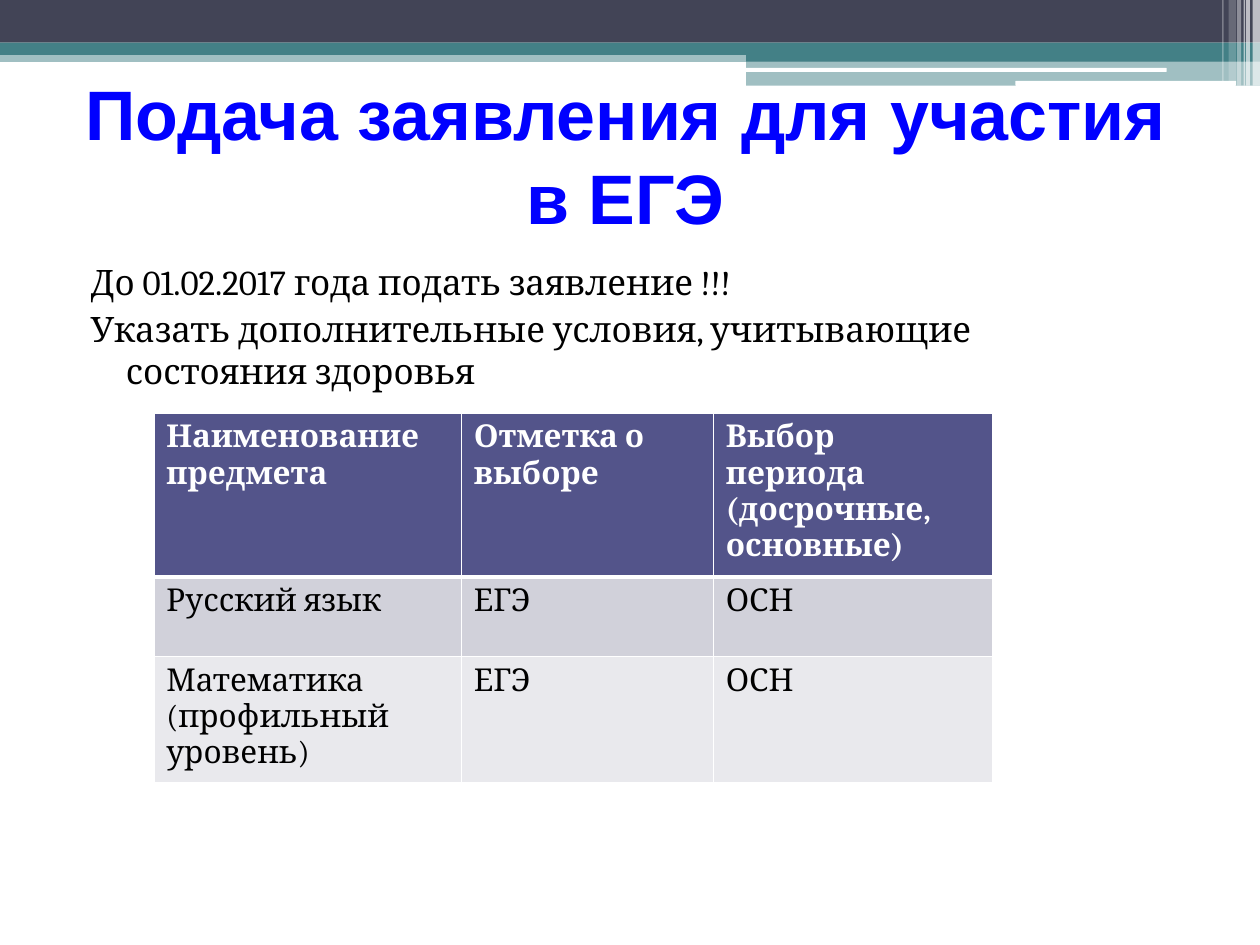
"""Build the slide about applying for the unified state exam."""
from dataclasses import dataclass

from lxml import etree
from pptx import Presentation
from pptx import util as u
from pptx.dml.color import RGBColor
from pptx.enum import shapes, text
from pptx.oxml.ns import qn

COLORS = {
    "slate": "424456", "teal": "438086", "white": "FFFFFF", "blue": "0000FF",
    "black": "000000", "header": "53548A", "odd": "D1D1DA", "even": "E9E9ED",
}
RECT = shapes.MSO_SHAPE.RECTANGLE
ROUND = shapes.MSO_SHAPE.ROUNDED_RECTANGLE
WIDTH, HEIGHT = 25.4, 19.05
SPLIT = 15.04


@dataclass
class Band:
    left: float
    top: float
    width: float
    height: float
    color: str
    opacity: int = 100
    outline: shapes.MSO_SHAPE = RECT


@dataclass
class Style:
    font: str
    size: int
    color: str
    bold: bool = False


BANDS = [
    Band(0, 1.02, WIDTH, 0.23, "teal", 50),
    Band(0, 0, WIDTH, 0.86, "slate"),
    Band(0, 0.86, WIDTH, 0.25, "teal"),
    Band(SPLIT, 0.99, WIDTH - SPLIT, 0.25, "teal"),
    Band(SPLIT, 1.22, WIDTH - SPLIT, 0.51, "teal", 50),
    Band(15.01, 1.37, 8.51, 0.08, "white", outline=ROUND),
    Band(20.47, 1.63, 4.45, 0.1, "white", outline=ROUND),
] + [
    Band(left, 0, width, height, "white", opacity)
    for left, width, height, opacity in [
        (25.25, 0.15, 1.73, 65), (25.12, 0.08, 1.73, 65), (25.07, 0.03, 1.73, 60),
        (24.94, 0.08, 1.73, 40), (24.77, 0.15, 1.63, 20), (24.64, 0.03, 1.63, 30),
    ]
]
TITLE = Style("Arial", 40, "blue", True)
BODY = Style("Cambria", 20, "black")
HEADER = Style("Cambria", 18, "white", True)
ENTRY = Style("Cambria", 18, "black")
INSTRUCTIONS = [
    "До 01.02.2017 года подать заявление !!!",
    "Указать дополнительные условия, учитывающие состояния здоровья",
]
COLUMN_WIDTHS = [6.2, 5.08, 5.64]
ROW_HEIGHTS = [3.15, 1.6, 2.44]
SUBJECTS = [
    ["Наименование предмета", "Отметка о выборе", "Выбор периода (досрочные, основные)"],
    ["Русский язык", "ЕГЭ", "ОСН"],
    ["Математика (профильный уровень)", "ЕГЭ", "ОСН"],
]


def rgb(name: str) -> RGBColor:
    """Look up a named colour."""
    return RGBColor.from_string(COLORS[name])


def write(paragraph, words: str, style: Style) -> None:
    """Add one styled run to a paragraph."""
    run = paragraph.add_run()
    run.text = words
    run.font.name = style.font
    run.font.size = u.Pt(style.size)
    run.font.bold = style.bold
    run.font.color.rgb = rgb(style.color)


def draw_band(slide, band: Band) -> None:
    """Draw one borderless decorative band."""
    strip = slide.shapes.add_shape(
        band.outline, u.Cm(band.left), u.Cm(band.top), u.Cm(band.width), u.Cm(band.height))
    strip.shadow.inherit = False
    strip.line.fill.background()
    strip.fill.solid()
    strip.fill.fore_color.rgb = rgb(band.color)
    if band.opacity < 100:
        color = next(strip.fill._xPr.iter(qn("a:srgbClr")))
        etree.SubElement(color, qn("a:alpha"), val=str(band.opacity * 1000))


def add_frame(slide, left: float, top: float, width: float, height: float):
    """Add a wrapping text box and return its text frame."""
    frame = slide.shapes.add_textbox(
        u.Cm(left), u.Cm(top), u.Cm(width), u.Cm(height)).text_frame
    frame.word_wrap = True
    return frame


def draw_title(slide) -> None:
    """Write the centred heading."""
    heading = add_frame(slide, 1.09, 1.73, 23.04, 2.79)
    heading.vertical_anchor = text.MSO_ANCHOR.MIDDLE
    heading.paragraphs[0].alignment = text.PP_ALIGN.CENTER
    write(heading.paragraphs[0], "Подача заявления для участия в ЕГЭ", TITLE)


def draw_instructions(slide) -> None:
    """Write the instructions with hanging indents."""
    frame = add_frame(slide, 1.27, 5.13, 21.16, 11.89)
    for index, instruction in enumerate(INSTRUCTIONS):
        paragraph = frame.add_paragraph() if index else frame.paragraphs[0]
        properties = paragraph._p.get_or_add_pPr()
        properties.set("marL", str(u.Cm(1.02)))
        properties.set("indent", str(u.Cm(-0.71)))
        if index:
            paragraph.space_before = u.Pt(3)
        write(paragraph, instruction, BODY)


def set_borders(cell, widths: dict[str, int]) -> None:
    """Give a cell white borders of the given point widths."""
    properties = cell._tc.get_or_add_tcPr()
    for position, (side, width) in enumerate(widths.items()):
        border = etree.Element(qn(f"a:ln{side}"), w=str(u.Pt(width)))
        fill = etree.SubElement(border, qn("a:solidFill"))
        etree.SubElement(fill, qn("a:srgbClr"), val=COLORS["white"])
        properties.insert(position, border)


def draw_subjects(slide) -> None:
    """Draw the table of exam subjects."""
    subjects = slide.shapes.add_table(
        len(SUBJECTS), len(COLUMN_WIDTHS), u.Cm(3.1), u.Cm(8.33),
        u.Cm(sum(COLUMN_WIDTHS)), u.Cm(sum(ROW_HEIGHTS))).table
    for column, width in zip(subjects.columns, COLUMN_WIDTHS):
        column.width = u.Cm(width)
    for row, height in zip(subjects.rows, ROW_HEIGHTS):
        row.height = u.Cm(height)
    for row, (entries, fill) in enumerate(zip(SUBJECTS, ["header", "odd", "even"])):
        for column, entry in enumerate(entries):
            cell = subjects.cell(row, column)
            cell.fill.solid()
            cell.fill.fore_color.rgb = rgb(fill)
            set_borders(cell, {"L": 1, "R": 1, "T": 3 if row == 1 else 1,
                               "B": 1 if row else 3})
            write(cell.text_frame.paragraphs[0], entry, ENTRY if row else HEADER)


def main() -> None:
    """Build and save the presentation."""
    deck = Presentation()
    deck.slide_width, deck.slide_height = u.Cm(WIDTH), u.Cm(HEIGHT)
    slide = deck.slides.add_slide(deck.slide_layouts[6])
    for band in BANDS:
        draw_band(slide, band)
    draw_title(slide)
    draw_instructions(slide)
    draw_subjects(slide)
    deck.save("out.pptx")


if __name__ == "__main__":
    main()
